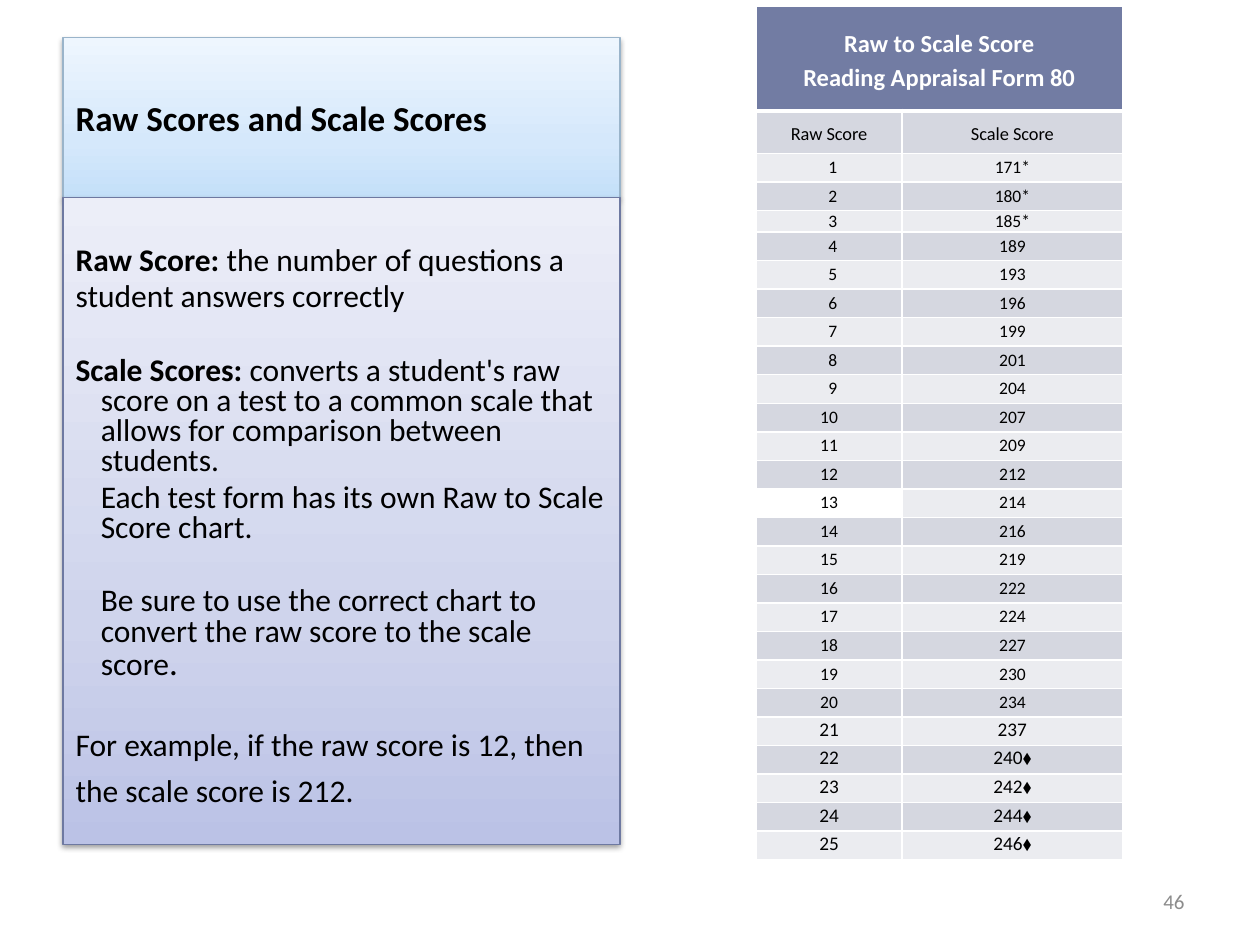
from lxml import etree
from pptx import Presentation
from pptx import util as u
from pptx.dml.color import RGBColor
from pptx.enum import text as t
from pptx.oxml import parse_xml

# Content
HEAD = "Raw Scores and Scale Scores"
# bold lead, text, hanging lead, space before (pt)
BODY = [
    ("Raw Score:", " the number of questions a", True, 0),
    ("", "student answers correctly", True, 3.6),
    ("Scale Scores: ", "converts a student's raw score on a test to a common scale "
     "that allows for comparison between students.", True, 24.6),
    ("", "Each test form has its own Raw to Scale Score chart.", False, 3.6),
    ("", "Be sure to use the correct chart to convert the raw score to the scale score",
     False, 24.6),
]
CLOSE = "For example, if the raw score is 12, then the scale score is 212."
TOP = ["Raw to Scale Score", "Reading Appraisal Form 80"]
COLS = ["Raw Score", "Scale Score"]
SCALE = ("171* 180* 185* 189 193 196 199 201 204 207 209 212 214 216 219 222 224 "
         "227 230 234 237 240⬧ 242⬧ 244⬧ 246⬧").split()
PAGE = "46"

HEX = {"ink": "000000", "white": "FFFFFF", "gray": "8C8C8C", "head": "727CA3",
       "dark": "D5D7E0", "pale": "EBECF0", "sky": "9AB4CA", "slate": "6E79A1"}
SKY = ["C4E0F9", "D5E8FB", "EEF6FE"]
LILAC = ["BBC2E6", "CFD4EC", "ECEEF8"]
NS = 'xmlns:a="http://schemas.openxmlformats.org/drawingml/2006/main"'
A = "{http://schemas.openxmlformats.org/drawingml/2006/main}"


def rgb(name):
    return RGBColor.from_string(HEX[name])


def put(obj, **vals):
    for key, val in vals.items():
        setattr(obj, key, val)


def add_run(para, words, size, color="ink", bold=False):
    run = para.add_run()
    run.text = words
    put(run.font, size=u.Pt(size), name="Calibri", bold=bold)
    run.font.color.rgb = rgb(color)


def panel(shape, box, stops, edge):
    """Place a placeholder; give it a gradient, an outline and a soft shadow."""
    put(shape, **dict(zip(("left", "top", "width", "height"), map(u.Inches, box))))
    shape.line.color.rgb = rgb(edge)
    shape.line.width = u.Pt(0.75)
    marks = "".join(f'<a:gs pos="{pos}000"><a:srgbClr val="{val}"/></a:gs>'
                    for pos, val in zip((0, 35, 100), stops))
    grad = parse_xml(f'<a:gradFill {NS} rotWithShape="1"><a:gsLst>{marks}</a:gsLst>'
                     '<a:lin ang="16200000" scaled="0"/></a:gradFill>')
    glow = parse_xml(f'<a:effectLst {NS}><a:outerShdw blurRad="{u.Pt(3.1)}" '
                     f'dist="{u.Pt(1.6)}" dir="5400000" rotWithShape="0">'
                     '<a:srgbClr val="000000"><a:alpha val="38000"/></a:srgbClr>'
                     '</a:outerShdw></a:effectLst>')
    line = shape.line._get_or_add_ln()
    line.addprevious(grad)
    line.addnext(glow)
    frame = shape.text_frame
    put(frame, word_wrap=True, auto_size=t.MSO_AUTO_SIZE.NONE)
    return frame


def plain(para, left=0, first=0):
    """Drop the bullet and set the indents."""
    prop = para._p.get_or_add_pPr()
    prop.set("marL", str(u.Inches(left)))
    prop.set("indent", str(u.Inches(first)))
    etree.SubElement(prop, A + "buNone")


def edges(cell, low):
    prop = cell._tc.get_or_add_tcPr()
    for at, side in enumerate("LRTB"):
        wide = u.Pt(low if side == "B" else 1)
        prop.insert(at, parse_xml(
            f'<a:ln{side} {NS} w="{wide}"><a:solidFill><a:srgbClr val="{HEX["white"]}"/>'
            f'</a:solidFill></a:ln{side}>'))


def fill_cell(cell, lines, size, fill, pads, space, color="ink", bold=False, low=1):
    sides = ("margin_left", "margin_top", "margin_right", "margin_bottom")
    put(cell, vertical_anchor=t.MSO_ANCHOR.MIDDLE, **dict(zip(sides, map(u.Inches, pads))))
    if fill:
        cell.fill.solid()
        cell.fill.fore_color.rgb = rgb(fill)
    else:
        cell.fill.background()
    edges(cell, low)
    frame = cell.text_frame
    for i, words in enumerate(lines):
        para = frame.add_paragraph() if i else frame.paragraphs[0]
        put(para, alignment=t.PP_ALIGN.CENTER, line_spacing=space)
        add_run(para, words, size, color, bold)


deck = Presentation()
put(deck, slide_width=u.Inches(10), slide_height=u.Inches(7.5))
slide = deck.slides.add_slide(deck.slide_layouts[1])

# Title panel
frame = panel(slide.shapes.title, (0.5, 0.3, 4.42, 1.27), SKY, "sky")
frame.vertical_anchor = t.MSO_ANCHOR.MIDDLE
para = frame.paragraphs[0]
para.alignment = t.PP_ALIGN.LEFT
add_run(para, HEAD, 20, bold=True)

# Body panel
frame = panel(slide.placeholders[1], (0.5, 1.57, 4.42, 5.13), LILAC, "slate")
frame.margin_top = u.Inches(0.39)
for i, (lead, words, hang, gap) in enumerate(BODY):
    para = frame.add_paragraph() if i else frame.paragraphs[0]
    plain(para, 0.2, -0.2 if hang else 0)
    put(para, line_spacing=0.8, space_before=u.Pt(gap))
    if lead:
        add_run(para, lead, 18, bold=True)
    add_run(para, words, 18)
add_run(para, ".", 20)
para = frame.add_paragraph()
plain(para)
put(para, line_spacing=1.2, space_before=u.Pt(20.5))
add_run(para, CLOSE, 18)

# Score table
high = 6.78
tall = {0: 0.83, 1: 0.34, 4: 0.17}
count = len(SCALE) + 2
each = (high - sum(tall.values())) / (count - len(tall))
grid = slide.shapes.add_table(count, 2, *map(u.Inches, (6, 0.05, 2.91, high))).table
put(grid, first_row=False, horz_banding=False)
for col, wide in zip(grid.columns, (1.16, 1.75)):
    col.width = u.Inches(wide)
for i, row in enumerate(grid.rows):
    row.height = u.Inches(tall.get(i, each))

roomy = (0.08, 0.04, 0.08, 0.04)
grid.cell(0, 0).merge(grid.cell(0, 1))
fill_cell(grid.cell(0, 0), TOP, 14, "head", roomy, 1.15, "white", True, 3)
for j, words in enumerate(COLS):
    fill_cell(grid.cell(1, j), [words], 10.5, "dark", roomy, 1.15)
for raw, score in enumerate(SCALE, 1):
    size = 11 if raw > 20 else 10
    band = "pale" if raw % 2 else "dark"
    shift = 0.06 if raw < 10 else 0  # lines single digits up with the units
    for j, words in enumerate((str(raw), score)):
        pads = (0.05 + (0 if j else shift), 0.01, 0.05, 0)
        fill = None if (raw, j) == (13, 0) else band
        fill_cell(grid.cell(raw + 1, j), [words], size, fill, pads, u.Pt(11.2))

# Page number
frame = slide.shapes.add_textbox(*map(u.Inches, (7.17, 6.95, 2.33, 0.4))).text_frame
put(frame, word_wrap=True, vertical_anchor=t.MSO_ANCHOR.MIDDLE)
para = frame.paragraphs[0]
para.alignment = t.PP_ALIGN.RIGHT
add_run(para, PAGE, 12, "gray")

deck.save("out.pptx")
